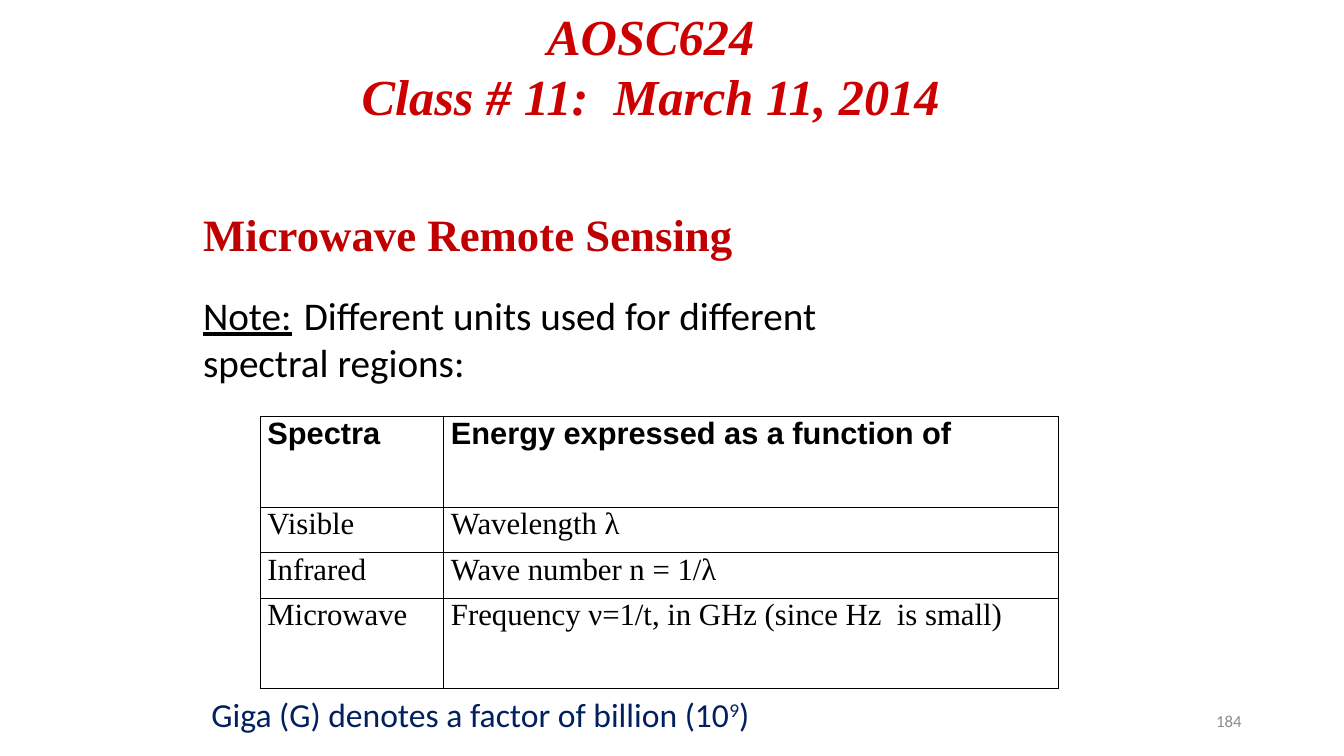
from lxml.etree import SubElement
from pptx import Presentation
from pptx.dml.color import RGBColor
from pptx.enum.text import MSO_ANCHOR, PP_ALIGN
from pptx.oxml.ns import qn
from pptx.util import Cm, Pt

BLACK = RGBColor(0x00, 0x00, 0x00)
TITLE_RED = RGBColor(0xCC, 0x00, 0x00)
HEADING_RED = RGBColor(0xC0, 0x00, 0x00)
NAVY = RGBColor(0x00, 0x20, 0x60)
GREY = RGBColor(0x8C, 0x8C, 0x8C)

SERIF = "Times New Roman"
TITLE = {"name": SERIF, "size": Pt(36), "bold": True, "italic": True, "color": TITLE_RED}
HEADING = {"name": SERIF, "size": Pt(32), "bold": True, "color": HEADING_RED}
NOTE = {"name": "Calibri", "size": Pt(28), "color": BLACK}
TABLE_HEAD = {"name": "Arial", "size": Pt(22), "bold": True, "color": BLACK}
TABLE_BODY = {"name": SERIF, "size": Pt(22), "bold": False, "color": BLACK}
FOOTNOTE = {"name": "Calibri", "size": Pt(24), "color": NAVY}
PAGE_NUMBER = {"name": "Calibri", "size": Pt(12), "color": GREY}

SPECTRA = [
    ("Spectra", "Energy expressed as a function of"),
    ("Visible", "Wavelength λ"),
    ("Infrared", "Wave number n = 1/λ"),
    ("Microwave", "Frequency ν=1/t, in GHz (since Hz  is small)"),
]


def add_span(para, text, style):
    span = para.add_run()
    span.text = text
    for key, value in style.items():
        if key == "color":
            span.font.color.rgb = value
        else:
            setattr(span.font, key, value)
    return span


def add_text_frame(page, box):
    frame = page.shapes.add_textbox(*map(Cm, box)).text_frame
    frame.word_wrap = True
    return frame


def add_title(page, box):
    para = add_text_frame(page, box).paragraphs[0]
    para.alignment = PP_ALIGN.CENTER
    add_span(para, "AOSC624", TITLE)
    para.add_line_break()
    add_span(para, "Class # 11:  March 11, 2014", TITLE)


def add_note(page, box):
    frame = add_text_frame(page, box)
    add_span(frame.paragraphs[0], "Microwave Remote Sensing", HEADING)
    para = frame.add_paragraph()
    para.space_before = Pt(22)
    add_span(para, "Note:", NOTE | {"underline": True})
    add_span(para, "\tDifferent units used for different", NOTE)
    add_span(frame.add_paragraph(), "spectral regions:", NOTE)


def add_borders(cell):
    properties = cell._tc.get_or_add_tcPr()
    for side in ("a:lnL", "a:lnR", "a:lnT", "a:lnB"):
        line = SubElement(properties, qn(side), w=str(Pt(1)))
        fill = SubElement(line, qn("a:solidFill"))
        SubElement(fill, qn("a:srgbClr"), val=str(BLACK))


def add_spectra_table(page, box):
    left, top, width, height = box
    table = page.shapes.add_table(len(SPECTRA), 2, *map(Cm, box)).table
    table.first_row = table.horz_banding = False
    first_width = 0.23 * width
    for column, size in zip(table.columns, (first_width, width - first_width)):
        column.width = Cm(size)
    for row, share in zip(table.rows, (2, 1, 1, 2)):
        row.height = Cm(height * share / 6)
    for row_index, texts in enumerate(SPECTRA):
        style = TABLE_BODY if row_index else TABLE_HEAD
        for column_index, text in enumerate(texts):
            cell = table.cell(row_index, column_index)
            cell.margin_left = cell.margin_right = Cm(0.18)
            cell.margin_top = cell.margin_bottom = 0
            add_borders(cell)
            cell.fill.background()
            add_span(cell.text_frame.paragraphs[0], text, style)


def add_footnote(page, box):
    para = add_text_frame(page, box).paragraphs[0]
    add_span(para, "Giga (G) denotes a factor of billion (10", FOOTNOTE)
    exponent = add_span(para, "9", FOOTNOTE)
    exponent._r.get_or_add_rPr().set("baseline", "30000")
    add_span(para, ")", FOOTNOTE)


def add_page_number(page, box):
    frame = add_text_frame(page, box)
    frame.vertical_anchor = MSO_ANCHOR.MIDDLE
    frame.paragraphs[0].alignment = PP_ALIGN.RIGHT
    add_span(frame.paragraphs[0], "184", PAGE_NUMBER)


def main():
    deck = Presentation()
    deck.slide_width, deck.slide_height = Cm(33.87), Cm(19.05)
    page = deck.slides.add_slide(deck.slide_layouts[6])
    add_spectra_table(page, (6.56, 10.5, 20.11, 6.86))
    add_note(page, (4.87, 5.08, 18.63, 5.56))
    add_title(page, (4.23, 0, 24.34, 4.87))
    add_footnote(page, (5.08, 17.36, 24.55, 1.27))
    add_page_number(page, (23.92, 17.65, 7.62, 1.01))
    deck.save("out.pptx")


if __name__ == "__main__":
    main()
